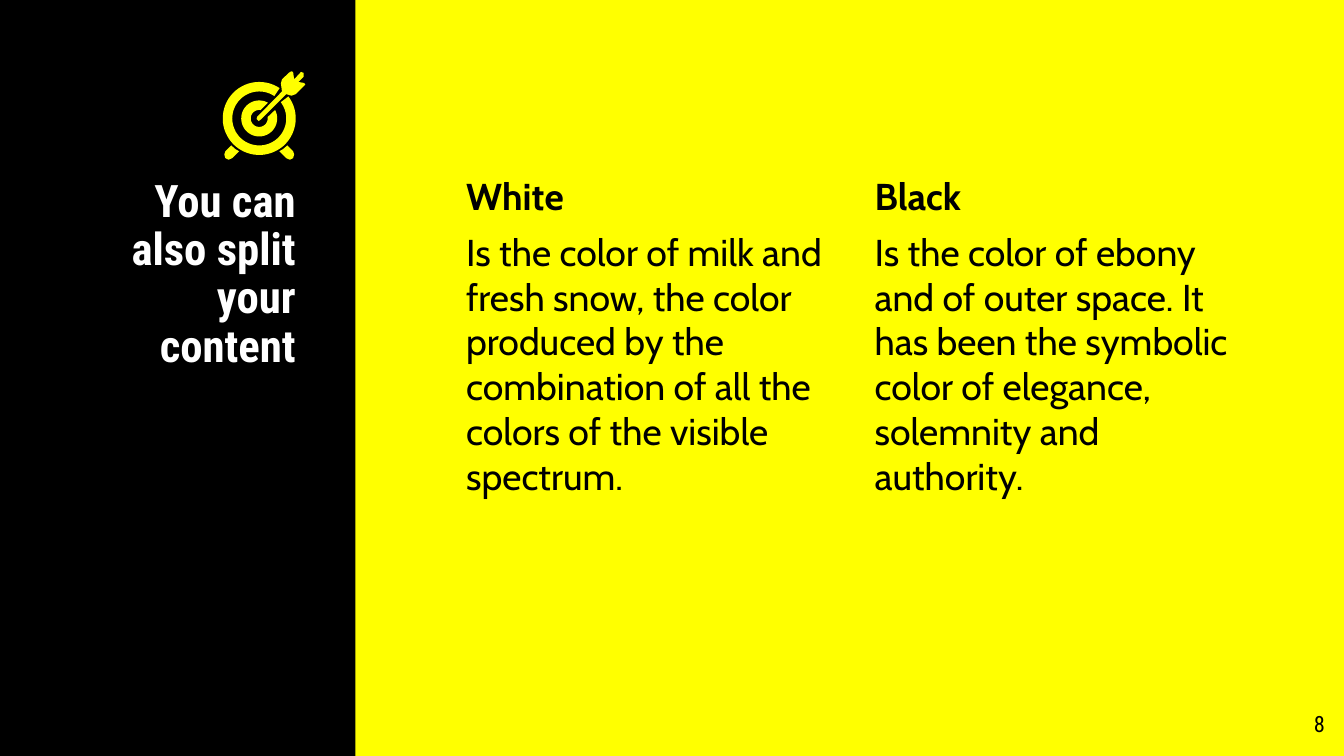
from math import cos, radians, sin

from pptx import Presentation
from pptx.dml.color import RGBColor
from pptx.enum.shapes import MSO_SHAPE as Shape
from pptx.enum.text import MSO_ANCHOR as Anchor, MSO_AUTO_SIZE as AutoSize, PP_ALIGN as Align
from pptx.util import Cm, Pt

YELLOW, BLACK, WHITE = "FFFF00", "000000", "FFFFFF"
HEADING_FONT, BODY_FONT = "Roboto Condensed", "Cabin"


def color(hex_code):
    return RGBColor.from_string(hex_code)


class SlideBuilder:
    """Holds the style and the current slide."""

    inset = Cm(0.25)

    def __init__(self, deck):
        self.page = deck.slides.add_slide(deck.slide_layouts[5])
        fill = self.page.background.fill
        fill.solid()
        fill.fore_color.rgb = color(YELLOW)

    def paint(self, shape, hex_code):
        shape.shadow.inherit = False
        shape.fill.solid()
        shape.fill.fore_color.rgb = color(hex_code)
        shape.line.fill.background()

    def frame(self, box):
        frame = box.text_frame
        frame.word_wrap = True
        frame.auto_size = AutoSize.NONE
        frame.vertical_anchor = Anchor.TOP
        frame.margin_left = frame.margin_right = self.inset
        frame.margin_top = frame.margin_bottom = self.inset
        return frame

    def span(self, para, text, font, size, hex_code, bold=False):
        span = para.add_run()
        span.text = text
        span.font.name = font
        span.font.size = Pt(size)
        span.font.bold = bold
        span.font.color.rgb = color(hex_code)

    def textbox(self, left, top, width, height):
        box = self.page.shapes.add_textbox(Cm(left), Cm(top), Cm(width), Cm(height))
        return self.frame(box)

    def title(self, text, left, top, width, height):
        box = self.page.shapes.title
        box.left, box.top, box.width, box.height = map(Cm, (left, top, width, height))
        para = self.frame(box).paragraphs[0]
        para.alignment = Align.RIGHT
        para.line_spacing = 0.9
        self.span(para, text, HEADING_FONT, 24, WHITE, bold=True)

    def panel(self, width, height):
        panel = self.page.shapes.add_shape(Shape.RECTANGLE, 0, 0, Cm(width), height)
        self.paint(panel, BLACK)
        # The panel lies behind the title
        self.page.shapes.title.element.addprevious(panel.element)

    def column(self, heading, text, left):
        frame = self.textbox(left, 3.02, 7.29, 10.64)
        self.span(frame.paragraphs[0], heading, BODY_FONT, 20, BLACK, bold=True)
        para = frame.add_paragraph()
        para.space_before = Pt(6)
        self.span(para, text, BODY_FONT, 20, BLACK)

    def page_number(self, text):
        para = self.textbox(23.77, 13.18, 1.52, 1.09).paragraphs[0]
        para.alignment = Align.RIGHT
        self.span(para, text, HEADING_FONT, 12, BLACK)

    def outline(self, points):
        first, *rest = [(Cm(x), Cm(y)) for x, y in points]
        builder = self.page.shapes.build_freeform(*first)
        builder.add_line_segments(rest, close=True)
        shape = builder.convert_to_shape()
        self.paint(shape, YELLOW)
        return shape

    def open_ring(self, center, outer, inner):
        """Each edge is (radius, start angle, end angle), counterclockwise."""
        def arc(radius, start, end, steps=60):
            angles = [radians(start + (end - start) * i / steps) for i in range(steps + 1)]
            return [(center[0] + radius * cos(a), center[1] - radius * sin(a)) for a in angles]

        return self.outline(arc(*outer) + arc(*inner)[::-1])


def main():
    deck = Presentation()
    deck.slide_width, deck.slide_height = Cm(25.4), Cm(14.29)
    slide = SlideBuilder(deck)

    # Side panel with title
    slide.panel(6.72, deck.slide_height)
    slide.title("You can also split your content", 1.12, 3.12, 4.72, 4.11)

    # Two text columns
    slide.column("White", "Is the color of milk and fresh snow, the color produced by the "
                 "combination of all the colors of the visible spectrum.", 8.56)
    slide.column("Black", "Is the color of ebony and of outer space. It has been the symbolic "
                 "color of elegance, solemnity and authority.", 16.28)

    # Target icon: rings, mirrored feet and dart
    center = (4.9, 2.24)
    foot = [(4.37, 2.75), (4.26, 2.86), (4.24, 2.92), (4.26, 2.99), (4.32, 3.02),
            (4.39, 2.99), (4.52, 2.86), (4.45, 2.82)]
    dart = [(5.51, 1.35), (5.48, 1.36), (5.33, 1.5), (5.31, 1.58), (5.33, 1.73),
            (4.86, 2.21), (4.85, 2.25), (4.89, 2.29), (4.93, 2.26), (5.41, 1.78),
            (5.51, 1.81), (5.59, 1.78), (5.77, 1.6), (5.75, 1.57), (5.64, 1.55),
            (5.74, 1.45), (5.74, 1.38), (5.69, 1.36), (5.56, 1.5), (5.54, 1.36)]
    icon = [
        slide.open_ring(center, (0.69, 56, 397), (0.51, 56, 397)),
        slide.open_ring(center, (0.34, 61, 388), (0.16, 80, 369)),
        slide.outline(foot),
        slide.outline([(2 * center[0] - x, y) for x, y in foot]),
        slide.outline(dart),
    ]
    slide.page.shapes.add_group_shape(icon)

    # Page number
    slide.page_number("8")
    deck.save("out.pptx")


if __name__ == "__main__":
    main()
